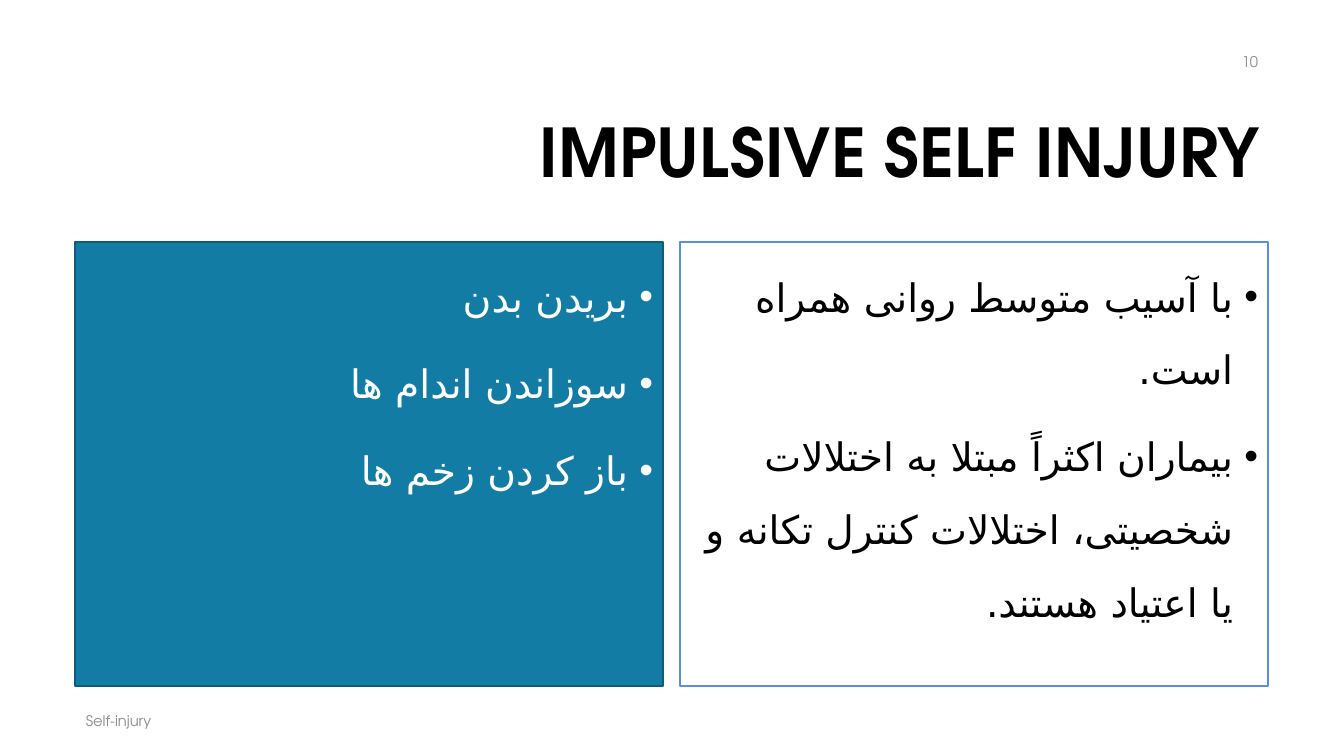
from lxml import etree
from pptx import Presentation
from pptx.dml.color import RGBColor
from pptx.enum.shapes import MSO_SHAPE
from pptx.enum.text import MSO_ANCHOR, PP_ALIGN
from pptx.oxml.ns import qn
from pptx.util import Emu, Pt

RECT = MSO_SHAPE.RECTANGLE
TOP, MIDDLE = MSO_ANCHOR.TOP, MSO_ANCHOR.MIDDLE
LEFT, RIGHT = PP_ALIGN.LEFT, PP_ALIGN.RIGHT
FONT = "TeX Gyre Adventor"
PERSIAN_FONT = "DejaVu Sans"
COLORS = {"black": "000000", "white": "FFFFFF", "gray": "8C8C8C",
          "teal": "127CA4", "dark_teal": "0D5C79", "blue": "588FE2"}
SCALE = 914400 / 100.8
BULLET_INDENT = 25


def px(*values):
    return [Emu(round(v * SCALE)) for v in values]


def write(sp, lines, size, color, align=RIGHT, anchor=MIDDLE, bold=False,
          spacing=None, before=0, bullets=False):
    tf = sp.text_frame
    tf.word_wrap = True
    tf.vertical_anchor = anchor
    for i, line in enumerate(lines):
        p = tf.add_paragraph() if i else tf.paragraphs[0]
        p.alignment = align
        if bullets:
            pPr = p._p.get_or_add_pPr()
            indent = px(BULLET_INDENT)[0]
            pPr.set("marL", str(indent))
            pPr.set("indent", str(-indent))
            pPr.set("rtl", "1")
            etree.SubElement(pPr, qn("a:buFont")).set("typeface", "Arial")
            etree.SubElement(pPr, qn("a:buChar")).set("char", "•")
        if spacing:
            p.line_spacing = spacing
        if i:
            p.space_before = Pt(before)
        r = p.add_run()
        r.text = line
        r.font.name = FONT
        r.font.size = Pt(size)
        r.font.bold = bold
        r.font.color.rgb = RGBColor.from_string(COLORS[color])
        etree.SubElement(r.font._element, qn("a:cs")).set("typeface", PERSIAN_FONT)


prs = Presentation()
prs.slide_width, prs.slide_height = px(1344, 756)
s = prs.slides.add_slide(prs.slide_layouts[5])

title = s.shapes.title
title.left, title.top, title.width, title.height = px(320, 85, 949, 142)
write(title, ["IMPULSIVE SELF INJURY"], 48, "black", bold=True, spacing=0.9)

panels = [
    ("teal", "dark_teal", "white",
     ["بریدن بدن", "سوزاندن اندام ها", "باز کردن زخم ها"]),
    ("white", "blue", "black",
     ["با آسیب متوسط روانی همراه است.",
      "بیماران اکثراً مبتلا به اختلالات شخصیتی، اختلالات کنترل تکانه و یا اعتیاد هستند."]),
]
for i, (fill, line, color, lines) in enumerate(panels):
    sp = s.shapes.add_shape(RECT, *px(75 + 605 * i, 242, 588, 444))
    sp.shadow.inherit = False
    sp.fill.solid()
    sp.fill.fore_color.rgb = RGBColor.from_string(COLORS[fill])
    sp.line.color.rgb = RGBColor.from_string(COLORS[line])
    sp.line.width = Pt(1)
    write(sp, lines, 28, color, anchor=TOP, spacing=1.55, before=10, bullets=True)

footers = [("10", RIGHT, (966, 42, 302, 40)),
           ("Self-injury", LEFT, (76, 701, 857, 40))]
for text, align, box in footers:
    write(s.shapes.add_textbox(*px(*box)), [text], 10.5, "gray", align=align)

prs.save("out.pptx")
